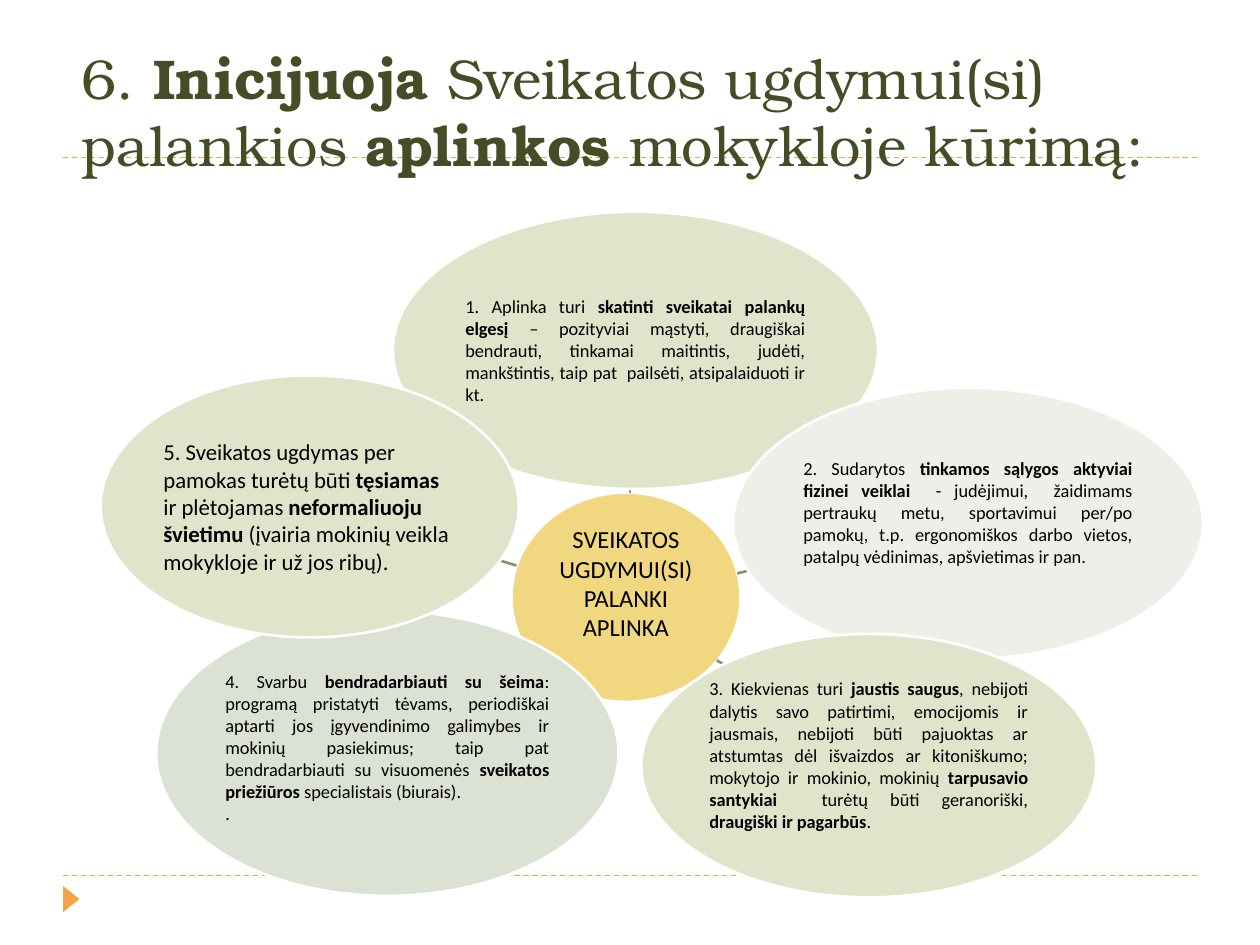
"""Slide on five ways to build a school environment that supports health education."""
from dataclasses import dataclass

from lxml import etree
from pptx import Presentation
from pptx import util as u
from pptx.dml.color import RGBColor
from pptx.enum import dml, shapes, text
from pptx.oxml.ns import qn

LEFT, CENTER, JUSTIFY = text.PP_ALIGN.LEFT, text.PP_ALIGN.CENTER, text.PP_ALIGN.JUSTIFY


@dataclass(frozen=True)
class Theme:
    heading_font: str = "TeX Gyre Bonum"
    body_font: str = "Calibri"
    heading: str = "444D26"
    body: str = "000000"
    accent: str = "F3A447"
    spoke: str = "849175"
    outline: str = "FFFFFF"
    hub: str = "F1D77F"
    green: str = "DFE5CA"
    pale: str = "EDF0E9"
    grey: str = "DBE1D3"
    title_size: float = 32
    hub_size: float = 14
    large_size: float = 13
    small_size: float = 10.5


class Deck:
    def __init__(self, prs, theme):
        self.theme = theme
        self.s = prs.slides.add_slide(prs.slide_layouts[6])

    def fill_text(self, tf, paragraphs, size, font, color, align, anchor, insets):
        frame = dict(word_wrap=True, vertical_anchor=anchor)
        frame.update(zip(("margin_left", "margin_top", "margin_right", "margin_bottom"),
                         map(u.Cm, insets)))
        for name, value in frame.items():
            setattr(tf, name, value)
        for i, line in enumerate(paragraphs):
            p = tf.add_paragraph() if i else tf.paragraphs[0]
            p.alignment = align
            for j, part in enumerate(line.split("*")):
                r = p.add_run()
                r.text = part
                for name, value in dict(name=font, size=u.Pt(size), bold=j % 2 == 1).items():
                    setattr(r.font, name, value)
                r.font.color.rgb = RGBColor.from_string(color)

    def title(self, box, line):
        t = self.theme
        sp = self.s.shapes.add_textbox(*map(u.Cm, box))
        self.fill_text(sp.text_frame, [line], t.title_size, t.heading_font, t.heading,
                       LEFT, text.MSO_ANCHOR.BOTTOM, (0.25, 0.13, 0.25, 0.13))

    def line(self, ends, color, width, dash=None):
        c = self.s.shapes.add_connector(shapes.MSO_CONNECTOR.STRAIGHT, *map(u.Cm, ends))
        for name, value in dict(width=u.Pt(width), dash_style=dash).items():
            setattr(c.line, name, value)
        c.line.color.rgb = RGBColor.from_string(color)
        etree.SubElement(c._element.spPr, qn("a:effectLst"))

    def shape(self, kind, box, fill):
        sp = self.s.shapes.add_shape(kind, *map(u.Cm, box))
        sp.shadow.inherit = False
        sp.fill.solid()
        sp.fill.fore_color.rgb = RGBColor.from_string(fill)
        return sp

    def marker(self, box):
        sp = self.shape(shapes.MSO_SHAPE.ISOSCELES_TRIANGLE, box, self.theme.accent)
        sp.rotation = 90
        sp.line.fill.background()

    def bubble(self, box, fill, paragraphs, size, align, lift=0.03):
        t = self.theme
        sp = self.shape(shapes.MSO_SHAPE.OVAL, box, fill)
        sp.line.width = u.Pt(1.5)
        sp.line.color.rgb = RGBColor.from_string(t.outline)
        self.fill_text(sp.text_frame, paragraphs, size, t.body_font, t.body, align,
                       text.MSO_ANCHOR.MIDDLE, (0.03, 0.03, 0.03, lift))


def main():
    prs = Presentation()
    prs.slide_width, prs.slide_height = u.Cm(25.4), u.Cm(19.05)
    t = Theme()
    d = Deck(prs, t)

    for y in (17.65, 3.18):
        d.line((1.27, y, 24.13, y), t.accent, 0.75, dml.MSO_LINE.DASH)
    d.marker((1.17, 17.96, 0.53, 0.33))
    d.title((1.4, 0.97, 22.86, 2.74),
            "6.* Inicijuoja *Sveikatos ugdymui(si) palankios *aplinkos* mokykloje kūrimą:")
    d.bubble((10.31, 9.93, 4.62, 4.22), t.hub, ["SVEIKATOS UGDYMUI(SI) PALANKI APLINKA"],
             t.hub_size, CENTER, 0.6)

    petals = [
        ((12.7, 9.93, 12.7, 9.86), (7.92, 4.27, 9.78, 5.59), t.green,
         ["1. Aplinka turi *skatinti sveikatai palankų elgesį* – pozityviai mąstyti, "
          "draugiškai bendrauti, tinkamai maitintis, judėti, mankštintis, "
          "taip pat  pailsėti, atsipalaiduoti ir kt."],
         t.small_size, JUSTIFY, 0.03),
        ((14.86, 11.56, 15.06, 11.51), (14.78, 7.82, 9.47, 5.46), t.pale,
         ["2. Sudarytos *tinkamos sąlygos aktyviai fizinei veiklai*  - judėjimui,  "
          "žaidimams pertraukų metu, sportavimui per/po pamokų, t.p. ergonomiškos "
          "darbo vietos, patalpų vėdinimas, apšvietimas ir pan."],
         t.small_size, JUSTIFY, 0.47),
        ((14.45, 13.31, 14.58, 13.39), (12.93, 12.78, 9.17, 5.31), t.green,
         ["3. Kiekvienas turi *jaustis saugus*, nebijoti dalytis savo patirtimi, "
          "emocijomis ir jausmais, nebijoti būti pajuoktas ar atstumtas dėl išvaizdos "
          "ar kitoniškumo; mokytojo ir mokinio, mokinių *tarpusavio santykiai  *"
          "turėtų būti geranoriški, *draugiški ir pagarbūs*."],
         t.small_size, JUSTIFY, 0.47),
        ((10.74, 13.26, 11, 13.08), (3.15, 12.32, 9.32, 5.74), t.grey,
         ["4. Svarbu *bendradarbiauti su šeima*: programą pristatyti tėvams, "
          "periodiškai aptarti jos įgyvendinimo galimybes ir mokinių pasiekimus; "
          "taip pat bendradarbiauti su visuomenės *sveikatos priežiūros *"
          "specialistais (biurais).", "."],
         t.small_size, JUSTIFY, 0.28),
        ((10.41, 11.4, 10.08, 11.3), (2.03, 7.57, 8.43, 5.28), t.green,
         ["5. Sveikatos ugdymas per pamokas turėtų būti *tęsiamas* ir plėtojamas "
          "*neformaliuoju švietimu* (įvairia mokinių veikla mokykloje ir už jos ribų)."],
         t.large_size, LEFT, 0.03),
    ]
    for spoke, *petal in petals:
        d.line(spoke, t.spoke, 1.5)
        d.bubble(*petal)

    prs.save("out.pptx")


if __name__ == "__main__":
    main()
